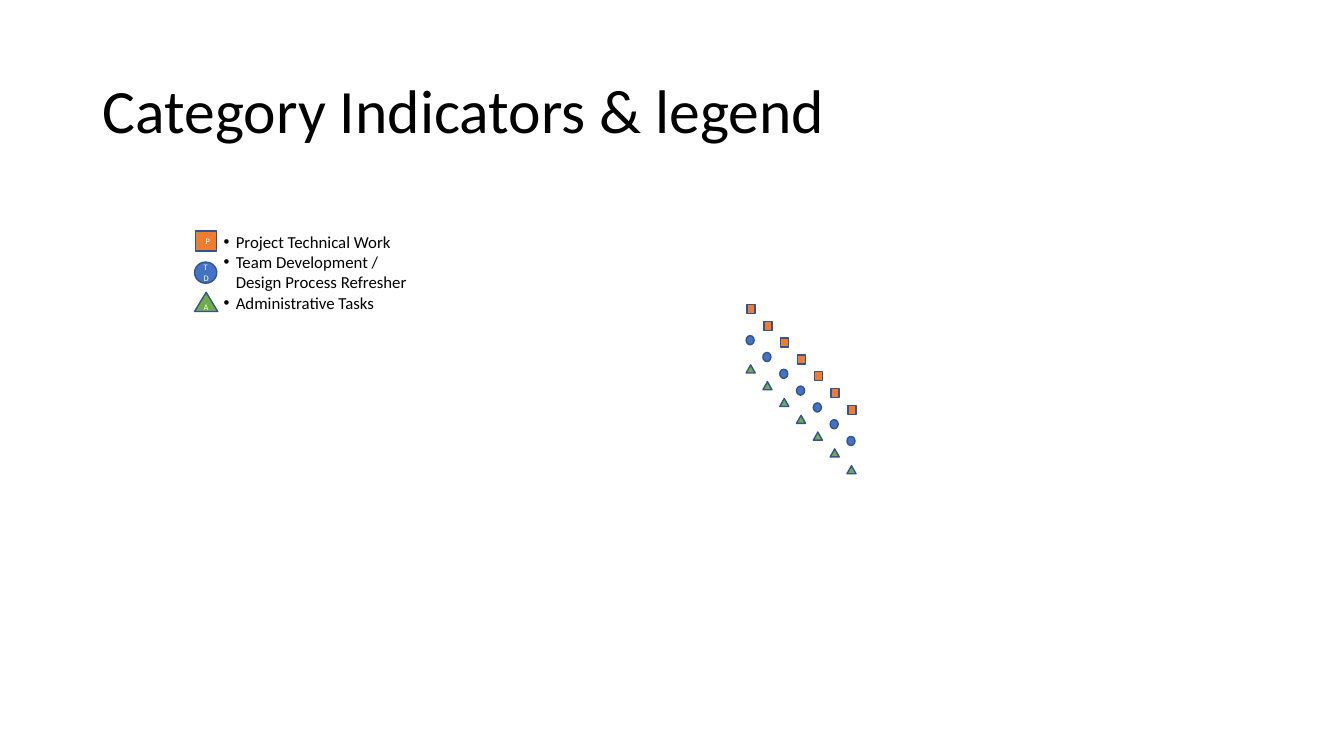
import dataclasses

import lxml.etree
import pptx
import pptx.dml.color
import pptx.enum.shapes
import pptx.enum.text
import pptx.oxml.ns
import pptx.util

Inches = pptx.util.Inches
Pt = pptx.util.Pt
RGB = pptx.dml.color.RGBColor.from_string
PRESET = pptx.enum.shapes.MSO_SHAPE
ALIGN = pptx.enum.text.PP_ALIGN
ANCHOR = pptx.enum.text.MSO_ANCHOR
FIT = pptx.enum.text.MSO_AUTO_SIZE


@dataclasses.dataclass(frozen=True)
class Theme:
    font: str = "Calibri"
    ink: str = "000000"
    label: str = "FFFFFF"
    outline: str = "325491"
    project: str = "ED7D31"
    team: str = "4472C4"
    admin: str = "70AD47"
    title_size: int = 44
    legend_size: int = 12
    label_size: int = 6


def apply(target, formats):
    for name, value in formats.items():
        setattr(target, name, value)


class SlideBuilder:
    def __init__(self, presentation, theme):
        self.theme = theme
        self.slide = presentation.slides.add_slide(presentation.slide_layouts[5])

    def add_text(self, paragraph, text, size, color):
        run = paragraph.add_run()
        run.text = text
        apply(run.font, {"name": self.theme.font, "size": Pt(size)})
        run.font.color.rgb = RGB(color)

    def title(self, text, box):
        title = self.slide.shapes.title
        apply(title, dict(zip(("left", "top", "width", "height"), map(Inches, box))))
        apply(title.text_frame, {"vertical_anchor": ANCHOR.MIDDLE,
                                 "word_wrap": True, "auto_size": FIT.NONE})
        paragraph = title.text_frame.paragraphs[0]
        apply(paragraph, {"alignment": ALIGN.LEFT, "line_spacing": 0.9})
        self.add_text(paragraph, text, self.theme.title_size, self.theme.ink)

    def bullets(self, shapes, entries, box, indent):
        """Add a text box from (text, has bullet) entries."""
        frame = shapes.add_textbox(*map(Inches, box)).text_frame
        apply(frame, {"word_wrap": True, "auto_size": FIT.SHAPE_TO_FIT_TEXT})
        for index, (text, bulleted) in enumerate(entries):
            paragraph = frame.add_paragraph() if index else frame.paragraphs[0]
            properties = paragraph._p.get_or_add_pPr()
            properties.set("marL", str(Inches(indent)))
            properties.set("indent", str(-Inches(indent) if bulleted else 0))
            if bulleted:
                for tag, key, value in (("a:buFont", "typeface", "Arial"),
                                        ("a:buChar", "char", "•")):
                    lxml.etree.SubElement(
                        properties, pptx.oxml.ns.qn(tag)).set(key, value)
            self.add_text(paragraph, text, self.theme.legend_size, self.theme.ink)

    def indicator(self, shapes, preset, color, box, label=""):
        marker = shapes.add_shape(preset, *map(Inches, box))
        marker.shadow.inherit = False
        marker.fill.solid()
        marker.fill.fore_color.rgb = RGB(color)
        marker.line.color.rgb = RGB(self.theme.outline)
        marker.line.width = Pt(1)
        if label:
            apply(marker.text_frame, {"vertical_anchor": ANCHOR.MIDDLE,
                                      "word_wrap": True})
            paragraph = marker.text_frame.paragraphs[0]
            paragraph.alignment = ALIGN.CENTER
            self.add_text(paragraph, label, self.theme.label_size, self.theme.label)


def main():
    presentation = pptx.Presentation()
    apply(presentation, {"slide_width": Inches(13.33), "slide_height": Inches(7.5)})
    theme = Theme()
    builder = SlideBuilder(presentation, theme)
    builder.title("Category Indicators & legend", (0.92, 0.4, 11.5, 1.45))

    # Preset, colour, label, legend box, box of the first small indicator
    categories = (
        (PRESET.OVAL, theme.team, "TD",
         (1.93, 2.6, 0.22, 0.21), (7.4, 3.33, 0.08, 0.09)),
        (PRESET.ISOSCELES_TRIANGLE, theme.admin, "A",
         (1.93, 2.9, 0.23, 0.19), (7.4, 3.62, 0.09, 0.08)),
        (PRESET.RECTANGLE, theme.project, "P",
         (1.94, 2.29, 0.21, 0.2), (7.41, 3.02, 0.08, 0.09)),
    )

    legend = builder.slide.shapes.add_group_shape().shapes
    builder.bullets(legend, (
        ("Project Technical Work", True),
        ("Team Development /", True),
        ("Design Process Refresher", False),
        ("Administrative Tasks", True),
    ), (2.12, 2.25, 3.09, 0.91), 0.12)
    for preset, color, label, box, _ in categories:
        builder.indicator(legend, preset, color, box, label)

    steps, step = 7, 1 / 6
    for index in range(steps):
        shift = index * step
        for preset, color, _, _, (left, top, width, height) in categories:
            builder.indicator(builder.slide.shapes, preset, color,
                              (left + shift, top + shift, width, height))

    presentation.save("out.pptx")


if __name__ == "__main__":
    main()
